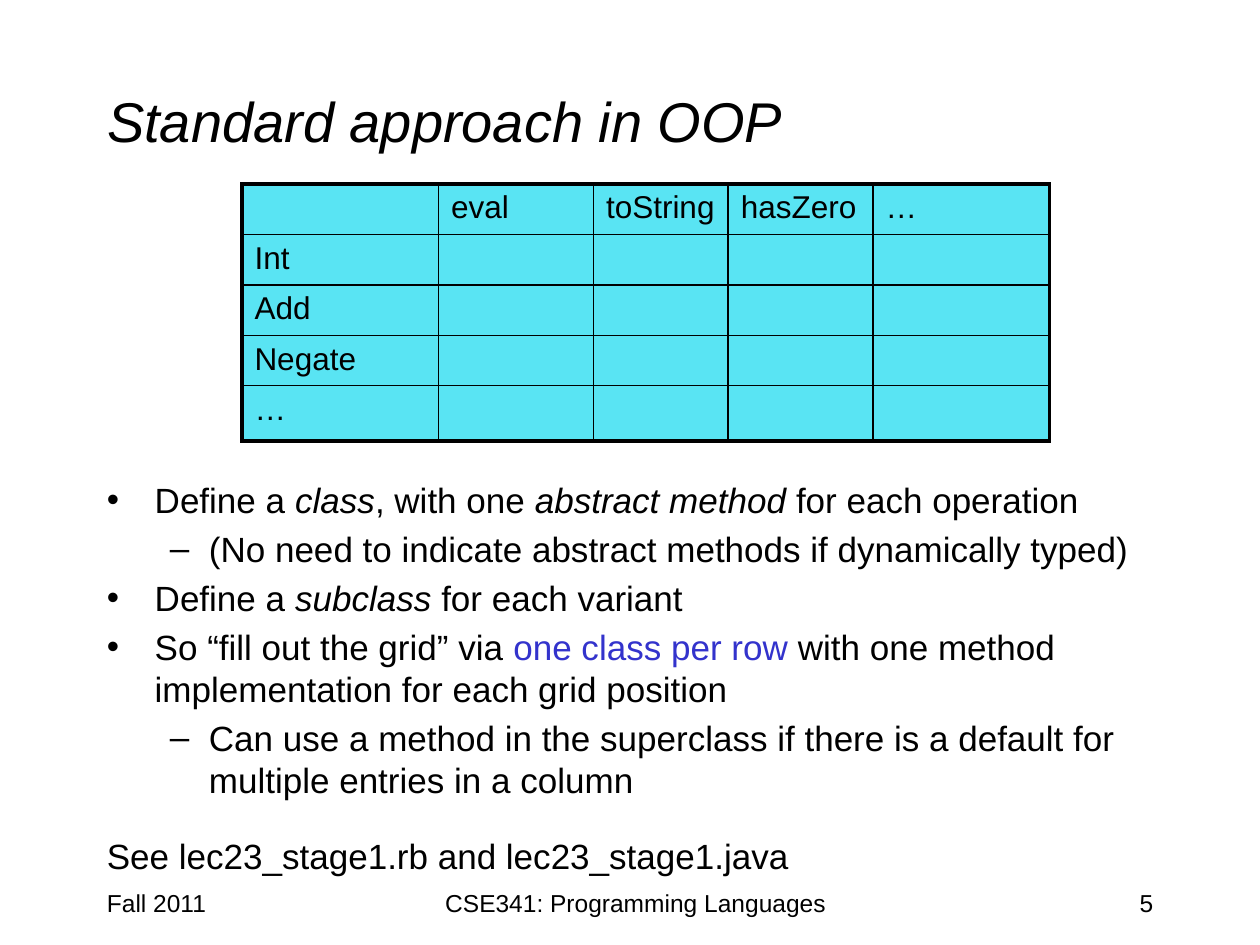
from lxml import etree
from pptx import Presentation
from pptx.dml.color import RGBColor
from pptx.enum.text import MSO_ANCHOR, PP_ALIGN
from pptx.oxml.ns import qn
from pptx.util import Inches, Pt

LEFT, CENTER, RIGHT = PP_ALIGN.LEFT, PP_ALIGN.CENTER, PP_ALIGN.RIGHT
TOP, MIDDLE = MSO_ANCHOR.TOP, MSO_ANCHOR.MIDDLE
COLORS = {"text": "000000", "accent": "3333CC", "cell": "59E4F3", "border": "000000"}
FONT = "Arial"

TITLE = "Standard approach in OOP"
OPERATIONS = ["eval", "toString", "hasZero", "…"]
VARIANTS = ["Int", "Add", "Negate", "…"]
COLUMN_WIDTHS = [1.56, 1.23, 1.07, 1.15, 1.4]
ROW_HEIGHTS = [0.38, 0.38, 0.38, 0.38, 0.44]
ITALIC = {"italic": True}
ACCENT = {"color": "accent"}

# Paragraph style, then runs of (text, format)
BODY = [
    ("bullet", [("Define a ", {}), ("class", ITALIC), (", with one ", {}),
                ("abstract method", ITALIC), (" for each operation", {})]),
    ("dash", [("(No need to indicate abstract methods if dynamically typed)", {})]),
    ("bullet", [("Define a ", {}), ("subclass", ITALIC), (" for each variant", {})]),
    ("bullet", [("So “fill out the grid” via ", {}), ("one class per row", ACCENT),
                (" with one method implementation for each grid position", {})]),
    ("dash", [("Can use a method in the superclass if there is a default for "
               "multiple entries in a column", {})]),
    ("plain", [("See lec23_stage1.rb and lec23_stage1.java", {})]),
]
# Marker, left margin, hanging indent, space before in points
PARAGRAPH_STYLES = {
    "bullet": ("•", 0.38, 0.38, 4),
    "dash": ("–", 0.81, 0.31, 4),
    "plain": (None, 0, 0, 19),
}
# Text, left, width, alignment
FOOTERS = [
    ("Fall 2011", 0.75, 2.08, LEFT),
    ("CSE341: Programming Languages", 3.17, 3.75, CENTER),
    ("5", 7.17, 2.08, RIGHT),
]


def add_run(paragraph, text, size, color="text", italic=False):
    run = paragraph.add_run()
    run.text = text
    settings = {"name": FONT, "size": Pt(size), "italic": italic}
    for name, value in settings.items():
        setattr(run.font, name, value)
    run.font.color.rgb = RGBColor.from_string(COLORS[color])


def place(shape, left, top, width, height, anchor=TOP):
    box = {"left": left, "top": top, "width": width, "height": height}
    for name, value in box.items():
        setattr(shape, name, Inches(value))
    shape.text_frame.word_wrap = True
    shape.text_frame.vertical_anchor = anchor


def add_text_box(slide, *box):
    shape = slide.shapes.add_textbox(0, 0, 0, 0)
    place(shape, *box)
    return shape.text_frame


def style_paragraph(paragraph, style):
    marker, margin, hanging, space_before = PARAGRAPH_STYLES[style]
    paragraph.space_before = Pt(space_before)
    if marker:
        properties = paragraph._p.get_or_add_pPr()
        properties.set("marL", str(Inches(margin)))
        properties.set("indent", str(-Inches(hanging)))
        etree.SubElement(properties, qn("a:buFont")).set("typeface", FONT)
        etree.SubElement(properties, qn("a:buChar")).set("char", marker)


def add_borders(cell, row, column, last_row, last_column):
    """Draw thick lines on the table's outer edges and thin ones inside."""
    outer = {"L": column == 0, "R": column == last_column,
             "T": row == 0, "B": row == last_row}
    properties = cell._tc.get_or_add_tcPr()
    for index, (side, is_outer) in enumerate(outer.items()):
        line = etree.Element(qn(f"a:ln{side}"), w=str(Pt(2.25 if is_outer else 1)))
        fill = etree.SubElement(line, qn("a:solidFill"))
        etree.SubElement(fill, qn("a:srgbClr")).set("val", COLORS["border"])
        properties.insert(index, line)


def add_grid(slide):
    rows = [[""] + OPERATIONS]
    rows += [[variant] + [""] * len(OPERATIONS) for variant in VARIANTS]
    table = slide.shapes.add_table(
        len(rows), len(rows[0]), Inches(1.92), Inches(1.46),
        Inches(sum(COLUMN_WIDTHS)), Inches(sum(ROW_HEIGHTS))).table
    table.first_row = table.horz_banding = False
    for column, width in zip(table.columns, COLUMN_WIDTHS):
        column.width = Inches(width)
    for row, height in zip(table.rows, ROW_HEIGHTS):
        row.height = Inches(height)
    for i, texts in enumerate(rows):
        for j, text in enumerate(texts):
            cell = table.cell(i, j)
            cell.fill.solid()
            cell.fill.fore_color.rgb = RGBColor.from_string(COLORS["cell"])
            add_borders(cell, i, j, len(rows) - 1, len(texts) - 1)
            if text:
                add_run(cell.text_frame.paragraphs[0], text, 18)


def main():
    presentation = Presentation()
    presentation.slide_width, presentation.slide_height = Inches(10), Inches(7.5)
    slide = presentation.slides.add_slide(presentation.slide_layouts[5])

    title = slide.shapes.title
    place(title, 0.75, 0.33, 8.5, 1.25, MIDDLE)
    heading = title.text_frame.paragraphs[0]
    heading.alignment = LEFT
    add_run(heading, TITLE, 32, italic=True)

    body = add_text_box(slide, 0.75, 3.75, 8.5, 2.92)
    for index, (style, runs) in enumerate(BODY):
        paragraph = body.add_paragraph() if index else body.paragraphs[0]
        style_paragraph(paragraph, style)
        for text, run_format in runs:
            add_run(paragraph, text, 20, **run_format)

    for text, left, width, alignment in FOOTERS:
        paragraph = add_text_box(slide, left, 7, width, 0.5).paragraphs[0]
        paragraph.alignment = alignment
        add_run(paragraph, text, 14)

    add_grid(slide)
    presentation.save("out.pptx")


if __name__ == "__main__":
    main()
